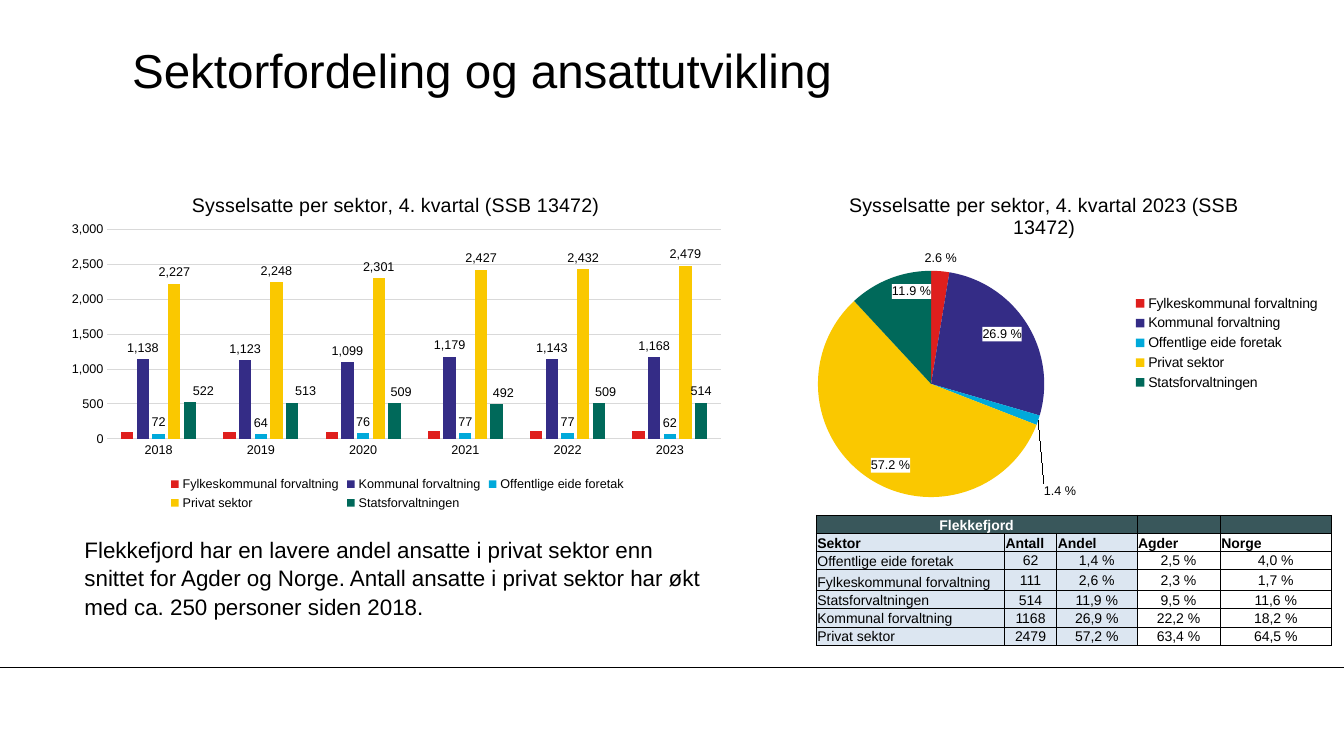
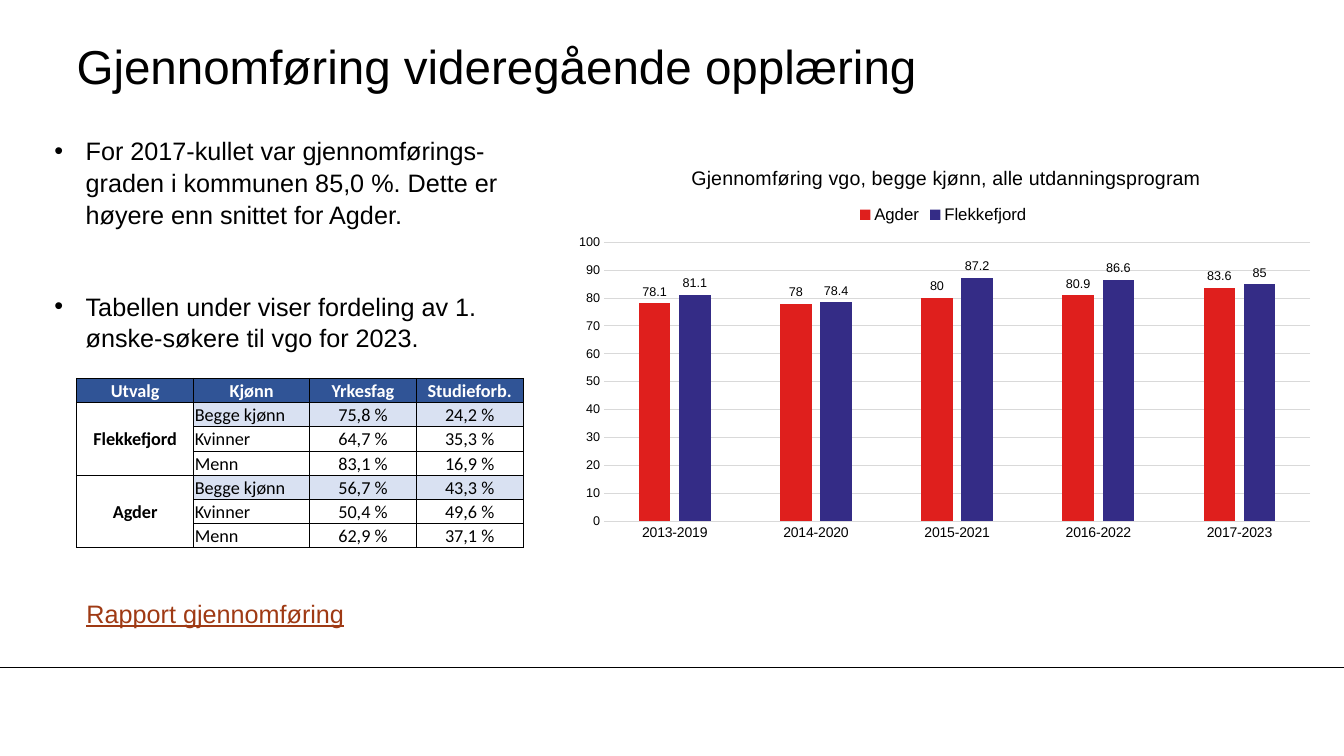
from copy import deepcopy

from pptx import Presentation
from pptx.chart.data import CategoryChartData
from pptx.dml.color import RGBColor
from pptx.enum.chart import XL_CHART_TYPE, XL_LABEL_POSITION, XL_LEGEND_POSITION, XL_TICK_MARK
from pptx.enum.shapes import MSO_CONNECTOR
from pptx.enum.text import MSO_ANCHOR, PP_ALIGN
from pptx.oxml.ns import qn
from pptx.oxml.xmlchemy import OxmlElement
from pptx.util import Cm, Pt

# Shared look
FONT = "Arial"
BLACK, WHITE, GRID = "000000", "FFFFFF", "D9D9D9"
RED, PURPLE, BLUE, YELLOW, GREEN = "DF1F1D", "342C86", "00A9DA", "FAC800", "00695A"
LINK = "9F3A14"
PAGE_WIDTH, PAGE_HEIGHT = Cm(33.87), Cm(19.05)
FOOTER_TOP = Cm(16.82)

SECTORS = ["Fylkeskommunal forvaltning", "Kommunal forvaltning", "Offentlige eide foretak",
           "Privat sektor", "Statsforvaltningen"]
SECTOR_COLORS = [RED, PURPLE, BLUE, YELLOW, GREEN]


def rgb(value):
    return RGBColor.from_string(value)


def element(tag, **attributes):
    node = OxmlElement(tag)
    for name, value in attributes.items():
        node.set(name, str(value))
    return node


# Text
def format_font(font, size, color=BLACK, bold=False, name=FONT):
    font.size, font.name, font.bold = Pt(size), name, bold
    font.color.rgb = rgb(color)


def write(para, text, size, color=BLACK, bold=False, name=FONT, align=PP_ALIGN.LEFT,
          underline=False, bullet=False, before=0, spacing=None):
    para.alignment = align
    if bullet:
        properties = para._p.get_or_add_pPr()
        properties.set("marL", str(Cm(0.79)))
        properties.set("indent", str(-Cm(0.79)))
        properties.append(element("a:buFont", typeface=FONT))
        properties.append(element("a:buChar", char="•"))
    if before:
        para.space_before = Pt(before)
    if spacing:
        para.line_spacing = spacing
    if not text:
        para._p.append(element("a:endParaRPr", sz=size * 100))
        return
    span = para.add_run()
    span.text = text
    format_font(span.font, size, color, bold, name)
    if underline:
        span.font.underline = True


def add_text(page, left, top, width, height, paragraphs, gap=0, **text_format):
    frame = page.shapes.add_textbox(Cm(left), Cm(top), Cm(width), Cm(height)).text_frame
    frame.word_wrap = True
    for index, text in enumerate(paragraphs):
        para = frame.add_paragraph() if index else frame.paragraphs[0]
        write(para, text, before=gap if index else 0, **text_format)


# Page with title and footer line
def add_page(deck, title, left, top):
    page = deck.slides.add_slide(deck.slide_layouts[5])
    box = page.shapes.title
    box.left, box.top, box.width, box.height = Cm(left), Cm(top), Cm(28.2), Cm(1.9)
    frame = box.text_frame
    frame.margin_left = frame.margin_right = frame.margin_top = frame.margin_bottom = 0
    frame.vertical_anchor = MSO_ANCHOR.MIDDLE
    write(frame.paragraphs[0], title, 34)
    rule = page.shapes.add_connector(MSO_CONNECTOR.STRAIGHT, 0, FOOTER_TOP, PAGE_WIDTH, FOOTER_TOP)
    rule.line.color.rgb = rgb(BLACK)
    rule.line.width = Pt(0.75)
    rule._element.spPr.append(element("a:effectLst"))
    return page


# Tables
def border_cell(cell):
    properties = cell._tc.get_or_add_tcPr()
    for position, side in enumerate(("a:lnL", "a:lnR", "a:lnT", "a:lnB")):
        line = element(side, w=Pt(0.5))
        fill = element("a:solidFill")
        fill.append(element("a:srgbClr", val=BLACK))
        line.append(fill)
        properties.insert(position, line)


def add_grid(page, left, top, widths, heights, rows, cell_style, merges):
    """cell_style(row, column) gives fill, anchor and the text format of a cell."""
    table = page.shapes.add_table(len(rows), len(widths), Cm(left), Cm(top),
                                  Cm(sum(widths)), Cm(sum(heights))).table
    table.first_row = table.horz_banding = False
    for column, width in zip(table.columns, widths):
        column.width = Cm(width)
    for row, height in zip(table.rows, heights):
        row.height = Cm(height)
    for row, texts in enumerate(rows):
        for column, text in enumerate(texts):
            cell = table.cell(row, column)
            fill, anchor, text_format = cell_style(row, column)
            cell.margin_left = cell.margin_right = cell.margin_top = Cm(0.03)
            cell.margin_bottom = 0
            cell.vertical_anchor = anchor
            if fill:
                cell.fill.solid()
                cell.fill.fore_color.rgb = rgb(fill)
            else:
                cell.fill.background()
            border_cell(cell)
            write(cell.text_frame.paragraphs[0], text, **text_format)
    for first, last in merges:
        table.cell(*first).merge(table.cell(*last))


def sector_style(row, column):
    number = row > 1 and column > 0
    centred = number or row == 0
    fill = "39575B" if row == 0 else "DCE6F1" if column < 3 else None
    return fill, MSO_ANCHOR.MIDDLE if number else MSO_ANCHOR.BOTTOM, dict(
        size=10, bold=row < 2, color=BLACK if row else WHITE,
        align=PP_ALIGN.CENTER if centred else PP_ALIGN.LEFT)


def applicant_style(row, column):
    fill = "305496" if row == 0 else "D9E1F2" if row in (1, 4) and column else WHITE
    anchor = MSO_ANCHOR.MIDDLE if row and column == 0 else MSO_ANCHOR.BOTTOM
    return fill, anchor, dict(
        size=13, name="Calibri", bold=row == 0 or column == 0, color=BLACK if row else WHITE,
        align=PP_ALIGN.LEFT if row and column == 1 else PP_ALIGN.CENTER)


# Charts
def place(parent, x, y, width=None, height=None, mode="edge"):
    layout = parent.find(qn("c:layout"))
    if layout is None:
        layout = element("c:layout")
        parent.insert(0, layout)
    manual = element("c:manualLayout")
    layout.append(manual)
    if width:
        manual.append(element("c:layoutTarget", val="inner"))
    manual.append(element("c:xMode", val=mode))
    manual.append(element("c:yMode", val=mode))
    for tag, value in (("c:x", x), ("c:y", y), ("c:w", width), ("c:h", height)):
        if value is not None:
            manual.append(element(tag, val=value))


def move_label(labels, index, x=0, y=0):
    """Give one point a label outside its mark, shifted by a share of the chart."""
    parent = labels._element
    label = element("c:dLbl")
    if x or y:
        place(label, x, y, mode="factor")
    label.insert(0, element("c:idx", val=index))
    for part in parent:
        if part.tag not in (qn("c:dLbl"), qn("c:showLeaderLines")):
            label.append(deepcopy(part))
    label.find(qn("c:dLblPos")).set("val", "outEnd")
    parent.insert(len(parent.findall(qn("c:dLbl"))), label)


def label_series(series, number_format, position):
    labels = series.data_labels
    labels.show_value = True
    labels.number_format, labels.number_format_is_linked = number_format, False
    labels.position = position
    format_font(labels.font, 9)
    return labels


def add_graph(page, kind, area, title, title_at, plot_area, legend, legend_size, categories, series):
    data = CategoryChartData()
    data.categories = categories
    for name, values in series:
        data.add_series(name, values)
    chart = page.shapes.add_chart(kind, *map(Cm, area), data).chart
    format_font(chart.font, 10)
    chart.has_title = True
    write(chart.chart_title.text_frame.paragraphs[0], title, 14, align=PP_ALIGN.CENTER)
    place(chart.chart_title._element, *title_at)
    place(chart._chartSpace.chart.plotArea, *plot_area)
    chart.has_legend = True
    chart.legend.position, chart.legend.include_in_layout = legend, False
    format_font(chart.legend.font, legend_size)
    return chart


def format_columns(chart, colors, top, step, category_size):
    plot = chart.plots[0]
    plot.gap_width, plot.overlap, plot.vary_by_categories = 219, -27, False
    for series, color in zip(plot.series, colors):
        series.format.fill.solid()
        series.format.fill.fore_color.rgb = rgb(color)
    for axis, size in ((chart.category_axis, category_size), (chart.value_axis, 9)):
        axis.major_tick_mark = axis.minor_tick_mark = XL_TICK_MARK.NONE
        format_font(axis.tick_labels.font, size)
    values = chart.value_axis
    values.minimum_scale, values.maximum_scale, values.major_unit = 0, top, step
    values.tick_labels.number_format = "#,##0"
    values.tick_labels.number_format_is_linked = False
    values.format.line.fill.background()
    for line in (chart.category_axis.format.line, values.major_gridlines.format.line):
        line.color.rgb = rgb(GRID)
        line.width = Pt(0.75)


def format_pie(chart, colors):
    series = chart.plots[0].series[0]
    for index, color in enumerate(colors):
        fill = series.points[index].format.fill
        fill.solid()
        fill.fore_color.rgb = rgb(color)
    labels = label_series(series, "0.0\\ %", XL_LABEL_POSITION.INSIDE_END)
    labels.show_value, labels.show_percentage = False, True
    background = element("c:spPr")
    fill = element("a:solidFill")
    fill.append(element("a:srgbClr", val=WHITE))
    background.append(fill)
    labels._element.find(qn("c:txPr")).addprevious(background)
    move_label(labels, 0)
    move_label(labels, 2, y=0.18)


# Slides
def add_sector_page(deck):
    page = add_page(deck, "Sektorfordeling og ansattutvikling", 3.33, 0.81)
    add_text(page, 1.88, 13.36, 16.28, 2.31, [
        "Flekkefjord har en lavere andel ansatte i privat sektor enn snittet for Agder og Norge. "
        "Antall ansatte i privat sektor har økt med ca. 250 personer siden 2018."],
        size=16, spacing=1.05)
    add_grid(page, 20.57, 12.98, [4.74, 1.32, 2.02, 2.1, 2.8],
             [0.45, 0.45, 0.45, 0.54, 0.45, 0.45, 0.45], [
        ["Flekkefjord", "", "", "", ""],
        ["Sektor", "Antall", "Andel", "Agder", "Norge"],
        ["Offentlige eide foretak", "62", "1,4 %", "2,5 %", "4,0 %"],
        ["Fylkeskommunal forvaltning", "111", "2,6 %", "2,3 %", "1,7 %"],
        ["Statsforvaltningen", "514", "11,9 %", "9,5 %", "11,6 %"],
        ["Kommunal forvaltning", "1168", "26,9 %", "22,2 %", "18,2 %"],
        ["Privat sektor", "2479", "57,2 %", "63,4 %", "64,5 %"],
    ], sector_style, [((0, 0), (0, 2))])

    employees = [[90, 90, 100, 110, 110, 110], [1138, 1123, 1099, 1179, 1143, 1168],
                 [72, 64, 76, 77, 77, 62], [2227, 2248, 2301, 2427, 2432, 2479],
                 [522, 513, 509, 492, 509, 514]]
    columns = add_graph(page, XL_CHART_TYPE.COLUMN_CLUSTERED, (1.52, 4.32, 16.99, 8.64),
                        "Sysselsatte per sektor, 4. kvartal (SSB 13472)", (0.19, 0.05),
                        (0.07, 0.17, 0.91, 0.61), XL_LEGEND_POSITION.BOTTOM, 9,
                        [str(year) for year in range(2018, 2024)], zip(SECTORS, employees))
    format_columns(columns, SECTOR_COLORS, 3000, 500, 9)
    for series in list(columns.plots[0].series)[1:]:
        labels = label_series(series, "#,##0", XL_LABEL_POSITION.OUTSIDE_END)
    # The last series has labels moved clear of the yellow columns
    for index, shift in enumerate([0.02, 0.02, 0.01, 0.01, 0.01]):
        move_label(labels, index, x=shift)

    pie = add_graph(page, XL_CHART_TYPE.PIE, (19.15, 4.32, 14.38, 8.64),
                    "Sysselsatte per sektor, 4. kvartal 2023 (SSB 13472)", (0.15, 0.05),
                    (0.1, 0.29, 0.4, 0.66), XL_LEGEND_POSITION.RIGHT, 10,
                    SECTORS, [("Andel", [2.6, 26.9, 1.4, 57.2, 11.9])])
    format_pie(pie, SECTOR_COLORS)


def add_education_page(deck):
    page = add_page(deck, "Gjennomføring videregående opplæring", 1.93, 0.69)
    add_text(page, 1.12, 3.25, 13.13, 5.64, [
        "For 2017-kullet var gjennomførings-graden i kommunen 85,0 %. "
        "Dette er høyere enn snittet for Agder.",
        "Tabellen under viser fordeling av 1. ønske-søkere til vgo for 2023."],
        gap=43, size=18, bullet=True, spacing=1.05)
    add_grid(page, 1.93, 9.53, [2.95, 2.92, 2.69, 2.69], [0.61] * 7, [
        ["Utvalg", "Kjønn", "Yrkesfag", "Studieforb."],
        ["Flekkefjord", "Begge kjønn", "75,8 %", "24,2 %"],
        ["", "Kvinner", "64,7 %", "35,3 %"],
        ["", "Menn", "83,1 %", "16,9 %"],
        ["Agder", "Begge kjønn", "56,7 %", "43,3 %"],
        ["", "Kvinner", "50,4 %", "49,6 %"],
        ["", "Menn", "62,9 %", "37,1 %"],
    ], applicant_style, [((1, 0), (3, 0)), ((4, 0), (6, 0))])
    add_text(page, 1.93, 14.91, 7.14, 1.02, ["Rapport gjennomføring"],
             size=18, color=LINK, underline=True, spacing=1.05)

    chart = add_graph(page, XL_CHART_TYPE.COLUMN_CLUSTERED, (14.27, 3.66, 19.13, 10.19),
                      "Gjennomføring vgo, begge kjønn, alle utdanningsprogram", (0.16, 0.04),
                      (0.05, 0.24, 0.93, 0.69), XL_LEGEND_POSITION.TOP, 12,
                      [f"{year}-{year + 6}" for year in range(2013, 2018)],
                      [("Agder", [78.1, 78, 80, 80.9, 83.6]),
                       ("Flekkefjord", [81.1, 78.4, 87.2, 86.6, 85])])
    place(chart.legend._element, 0.38, 0.14)
    format_columns(chart, [RED, PURPLE], 100, 10, 10)
    for series in chart.plots[0].series:
        label_series(series, "General", XL_LABEL_POSITION.OUTSIDE_END)


def main():
    deck = Presentation()
    deck.slide_width, deck.slide_height = PAGE_WIDTH, PAGE_HEIGHT
    add_sector_page(deck)
    add_education_page(deck)
    deck.save("out.pptx")


if __name__ == "__main__":
    main()
